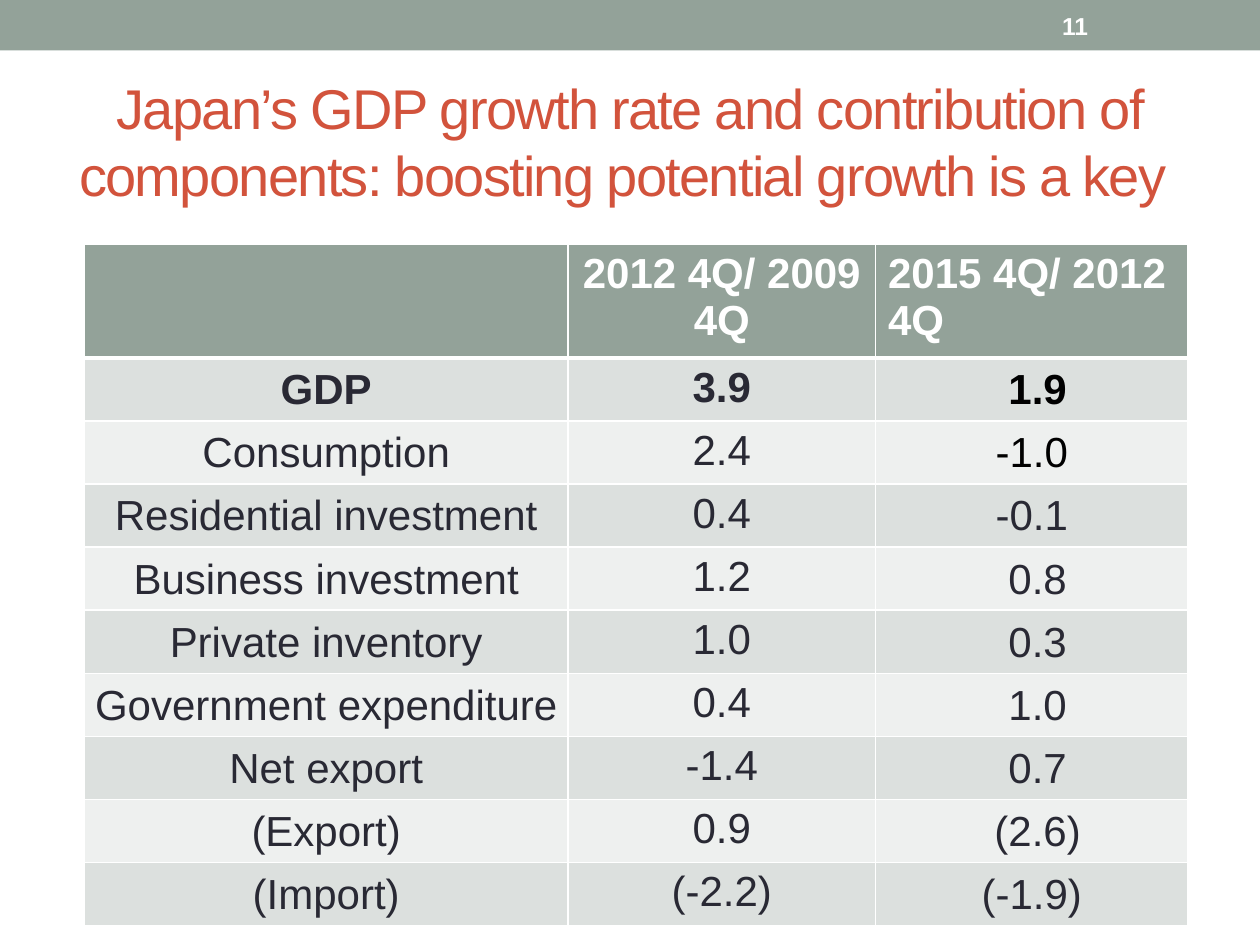
from dataclasses import dataclass

from lxml.etree import SubElement
from pptx import Presentation
from pptx.dml.color import RGBColor
from pptx.enum.shapes import MSO_SHAPE
from pptx.enum.text import MSO_ANCHOR, PP_ALIGN
from pptx.oxml import parse_xml
from pptx.oxml.ns import nsdecls, qn
from pptx.util import Cm, Pt


@dataclass(frozen=True)
class Theme:
    """Colours, font and type sizes of the slide."""

    font: str = "Arial"
    sage: str = "93A299"
    title: str = "D2533C"
    ink: str = "292934"
    black: str = "000000"
    white: str = "FFFFFF"
    bands: tuple = ("DCE0DE", "EEF0EF")
    title_size: int = 32
    table_size: int = 24
    number_size: int = 14


@dataclass(frozen=True)
class Box:
    """A region in centimetres."""

    left: float
    top: float
    width: float
    height: float

    def lengths(self):
        """Return the region as slide lengths."""
        return Cm(self.left), Cm(self.top), Cm(self.width), Cm(self.height)


THEME = Theme()
TITLE = "Japan’s GDP growth rate and contribution of components: boosting potential growth is a key "
HEADINGS = ("", "2012 4Q/ 2009 4Q", "2015 4Q/ 2012 4Q")
GROWTH = (
    ("GDP", "3.9", " 1.9"),
    ("Consumption", "2.4", "-1.0"),
    ("Residential investment", "0.4", "-0.1"),
    ("Business investment", "1.2", " 0.8"),
    ("Private inventory", "1.0", " 0.3"),
    ("Government expenditure", "0.4", " 1.0"),
    ("Net export", "-1.4", " 0.7"),
    ("(Export)", "0.9", " (2.6)"),
    ("(Import)", "(-2.2)", "(-1.9)"),
)
COLUMN_WIDTHS = (9.75, 6.2, 6.3)
HEADING_HEIGHT = 2.2
ROW_HEIGHT = 1.22


def write(frame, text, size, color, bold=False, align=PP_ALIGN.LEFT):
    """Put one formatted paragraph in a text frame."""
    frame.text = text
    paragraph = frame.paragraphs[0]
    paragraph.alignment = align
    font = paragraph.font
    font.name, font.size, font.bold = THEME.font, Pt(size), bold
    font.color.rgb = RGBColor.from_string(color)
    return paragraph


def add_header_band(slide, box):
    """Draw the top band with the slide number towards its right end."""
    band = slide.shapes.add_shape(MSO_SHAPE.RECTANGLE, *box.lengths())
    band.shadow.inherit = False
    band.fill.solid()
    band.fill.fore_color.rgb = RGBColor.from_string(THEME.sage)
    band.line.fill.background()
    number_box = Box(box.left + box.width - 4.24, box.top + 0.05, 2.97, box.height - 0.1)
    frame = slide.shapes.add_textbox(*number_box.lengths()).text_frame
    frame.word_wrap = True
    frame.vertical_anchor = MSO_ANCHOR.MIDDLE
    write(frame, "11", THEME.number_size, THEME.white, bold=True)


def place_title(slide, box):
    """Move and format the title placeholder."""
    title = slide.shapes.title
    title.left, title.top, title.width, title.height = box.lengths()
    frame = title.text_frame
    frame.vertical_anchor = MSO_ANCHOR.MIDDLE
    paragraph = write(frame, TITLE, THEME.title_size, THEME.title, align=PP_ALIGN.CENTER)
    for run in paragraph.runs:
        run.font._element.set("spc", "-100")


def set_cell(cell, fill, bottom_width=1):
    """Fill a cell and give it white borders."""
    properties = cell._tc.get_or_add_tcPr()
    for side, width in (("L", 1), ("R", 1), ("T", 1), ("B", bottom_width)):
        border = parse_xml(f'<a:ln{side} {nsdecls("a")} w="{Pt(width)}"/>')
        color = SubElement(SubElement(border, qn("a:solidFill")), qn("a:srgbClr"))
        color.set("val", THEME.white)
        properties.append(border)
    cell.fill.solid()
    cell.fill.fore_color.rgb = RGBColor.from_string(fill)


def fill_headings(table):
    """Write the heading row."""
    for index, heading in enumerate(HEADINGS):
        cell = table.cell(0, index)
        set_cell(cell, THEME.sage, bottom_width=3)
        align = PP_ALIGN.LEFT if index == 2 else PP_ALIGN.CENTER
        write(cell.text_frame, heading, THEME.table_size, THEME.white, True, align)


def fill_growth_row(table, row, values):
    """Write one component and its two contributions."""
    for column, value in enumerate(values):
        cell = table.cell(row, column)
        set_cell(cell, THEME.bands[(row - 1) % 2])
        if column != 1:
            cell.vertical_anchor = MSO_ANCHOR.MIDDLE
            cell.margin_left = cell.margin_right = cell.margin_top = Cm(0.03)
            cell.margin_bottom = 0
        color = THEME.black if column == 2 and row <= 2 else THEME.ink
        write(cell.text_frame, value, THEME.table_size, color, row == 1, PP_ALIGN.CENTER)


def add_growth_table(slide, box):
    """Build the table of growth contributions."""
    shape = slide.shapes.add_table(len(GROWTH) + 1, len(HEADINGS), *box.lengths())
    table = shape.table
    for column, width in zip(table.columns, COLUMN_WIDTHS):
        column.width = Cm(width)
    for index, row in enumerate(table.rows):
        row.height = Cm(ROW_HEIGHT if index else HEADING_HEIGHT)
    fill_headings(table)
    for row, values in enumerate(GROWTH, start=1):
        fill_growth_row(table, row, values)


def main():
    """Build and save the presentation."""
    presentation = Presentation()
    presentation.slide_width, presentation.slide_height = Cm(25.4), Cm(19.05)
    slide = presentation.slides.add_slide(presentation.slide_layouts[5])
    table_height = HEADING_HEIGHT + ROW_HEIGHT * len(GROWTH)
    add_header_band(slide, Box(0, 0, 25.4, 1.02))
    place_title(slide, Box(1.27, 1.47, 22.86, 2.74))
    add_growth_table(slide, Box(1.7, 4.93, sum(COLUMN_WIDTHS), table_height))
    presentation.save("out.pptx")


if __name__ == "__main__":
    main()
